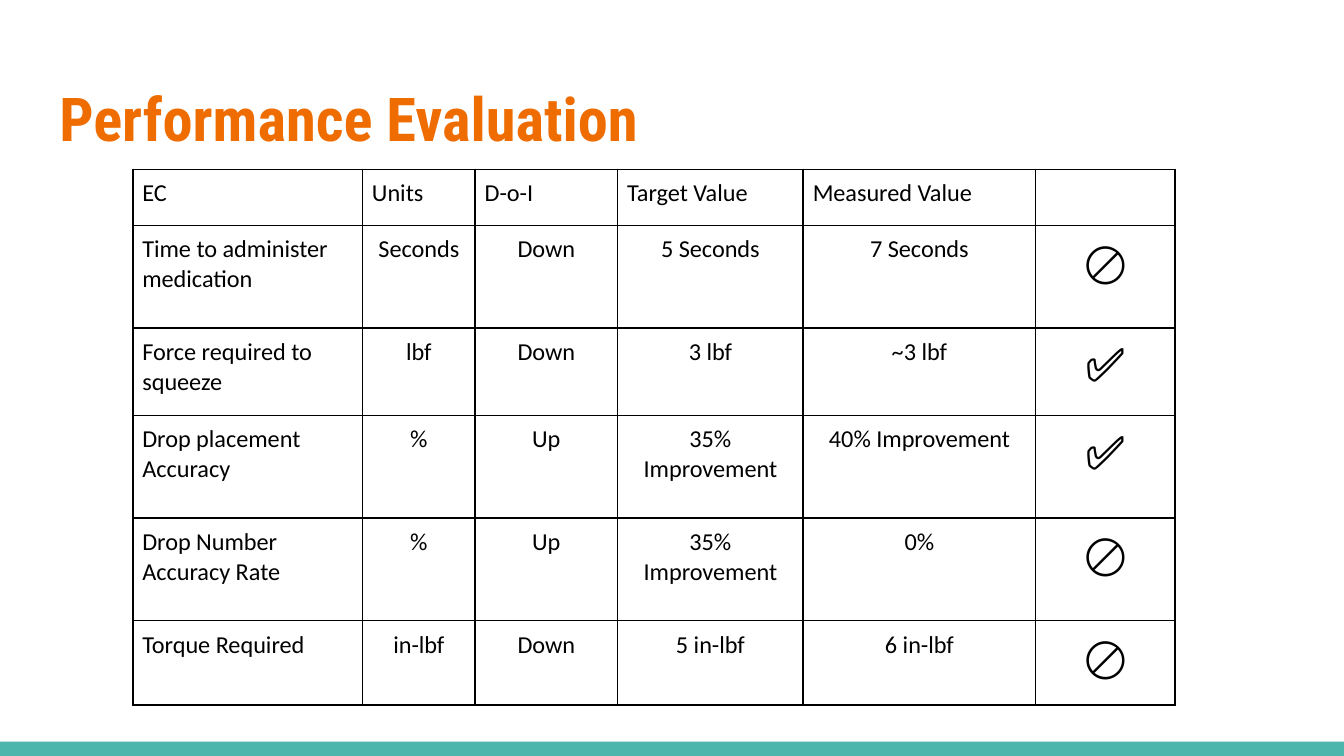
from dataclasses import dataclass

from lxml.etree import SubElement
from pptx import Presentation
from pptx.dml.color import RGBColor
from pptx.enum.shapes import MSO_SHAPE
from pptx.enum.text import MSO_ANCHOR, MSO_AUTO_SIZE, PP_ALIGN
from pptx.oxml.ns import qn
from pptx.util import Cm, Pt


@dataclass(frozen=True)
class Theme:
    title_color: RGBColor = RGBColor(0xEF, 0x6C, 0x00)
    bar_color: RGBColor = RGBColor(0x4D, 0xB6, 0xAC)
    text_color: RGBColor = RGBColor(0, 0, 0)
    title_font: str = "Roboto Condensed"
    table_font: str = "Calibri"
    title_size: Pt = Pt(32.4)
    table_size: Pt = Pt(13)
    symbol_size: Pt = Pt(25)
    border_color: str = "000000"
    border_width: Pt = Pt(1)


THEME = Theme()
FAILED, PASSED = "🚫", "✅"
ROWS = [
    ["EC", "Units", "D-o-I", "Target Value", "Measured Value", ""],
    ["Time to administer medication", "Seconds", "Down", "5 Seconds", "7 Seconds", FAILED],
    ["Force required to squeeze", "lbf", "Down", "3 lbf", "~3 lbf", PASSED],
    ["Drop placement Accuracy", "%", "Up", "35% Improvement", "40% Improvement", PASSED],
    ["Drop Number Accuracy Rate", "%", "Up", "35% Improvement", "0%", FAILED],
    ["Torque Required", "in-lbf", "Down", "5 in-lbf", "6 in-lbf", FAILED],
]
COLUMN_WIDTHS = [4.34, 2.13, 2.69, 3.51, 4.39, 2.64]
ROW_HEIGHTS = [1.06, 1.94, 1.65, 1.94, 1.94, 1.6]


def apply_format(target, values):
    for name, value in values.items():
        setattr(target, name, value)


def apply_font(font, color, values):
    apply_format(font, values)
    font.color.rgb = color


def add_bar(slide, box):
    bar = slide.shapes.add_shape(MSO_SHAPE.RECTANGLE, *box)
    bar.shadow.inherit = False
    bar.fill.solid()
    bar.fill.fore_color.rgb = THEME.bar_color
    bar.line.fill.background()


def add_title(slide, box, text):
    title = slide.shapes.title
    apply_format(title, dict(zip(("left", "top", "width", "height"), box)))
    frame = title.text_frame
    inset = Cm(0.25)
    apply_format(frame, {
        "text": text, "word_wrap": True, "auto_size": MSO_AUTO_SIZE.NONE,
        "vertical_anchor": MSO_ANCHOR.MIDDLE,
        "margin_left": inset, "margin_right": inset,
        "margin_top": inset, "margin_bottom": inset,
    })
    paragraph = frame.paragraphs[0]
    paragraph.alignment = PP_ALIGN.LEFT
    apply_font(paragraph.runs[0].font, THEME.title_color, {
        "name": THEME.title_font, "size": THEME.title_size, "bold": True,
    })


def add_borders(cell):
    properties = cell._tc.get_or_add_tcPr()
    for position, side in enumerate(("a:lnL", "a:lnR", "a:lnT", "a:lnB")):
        line = SubElement(properties, qn(side), w=str(int(THEME.border_width)))
        fill = SubElement(line, qn("a:solidFill"))
        SubElement(fill, qn("a:srgbClr"), val=THEME.border_color)
        # Borders come before the cell fill
        properties.insert(position, line)


def fill_cell(cell, text, alignment, size):
    inset = Cm(0.18)
    apply_format(cell, {
        "margin_left": inset, "margin_right": inset,
        "margin_top": inset, "margin_bottom": inset,
        "vertical_anchor": MSO_ANCHOR.TOP,
    })
    cell.fill.background()
    add_borders(cell)
    paragraph = cell.text_frame.paragraphs[0]
    paragraph.alignment = alignment
    if text:
        run = paragraph.add_run()
        run.text = text
        apply_font(run.font, THEME.text_color, {
            "name": THEME.table_font, "size": size, "bold": False,
        })
    else:
        # Keeps the empty cell from stretching its row
        paragraph._p.get_or_add_endParaRPr().set("sz", str(int(size.pt * 100)))


def add_evaluation_table(slide, box):
    table = slide.shapes.add_table(len(ROWS), len(COLUMN_WIDTHS), *box).table
    apply_format(table, {"first_row": False, "horz_banding": False})
    for column, width in zip(table.columns, COLUMN_WIDTHS):
        column.width = Cm(width)
    for row, height in zip(table.rows, ROW_HEIGHTS):
        row.height = Cm(height)
    for row_index, texts in enumerate(ROWS):
        for column_index, text in enumerate(texts):
            is_label = row_index == 0 or column_index == 0
            is_symbol = text in (FAILED, PASSED)
            fill_cell(
                table.cell(row_index, column_index), text,
                PP_ALIGN.LEFT if is_label else PP_ALIGN.CENTER,
                THEME.symbol_size if is_symbol else THEME.table_size,
            )


def main():
    presentation = Presentation()
    presentation.slide_width, presentation.slide_height = Cm(25.4), Cm(14.29)
    slide = presentation.slides.add_slide(presentation.slide_layouts[5])

    # Bottom bar, title and table
    add_bar(slide, (Cm(0), Cm(14.02), Cm(25.4), Cm(0.27)))
    add_title(slide, (Cm(0.87), Cm(1.25), Cm(23.67), Cm(1.95)), "Performance Evaluation")
    add_evaluation_table(
        slide, (Cm(2.51), Cm(3.2), Cm(sum(COLUMN_WIDTHS)), Cm(sum(ROW_HEIGHTS))))
    presentation.save("out.pptx")


if __name__ == "__main__":
    main()
